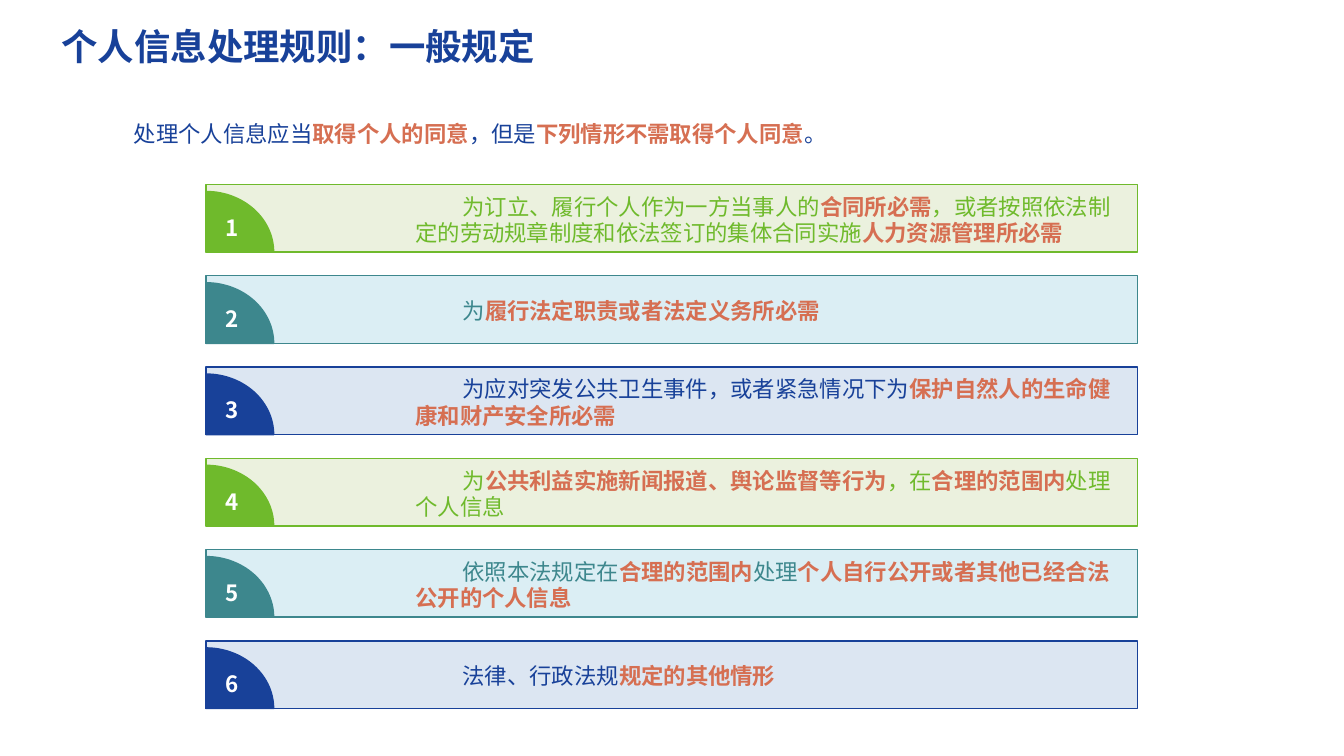
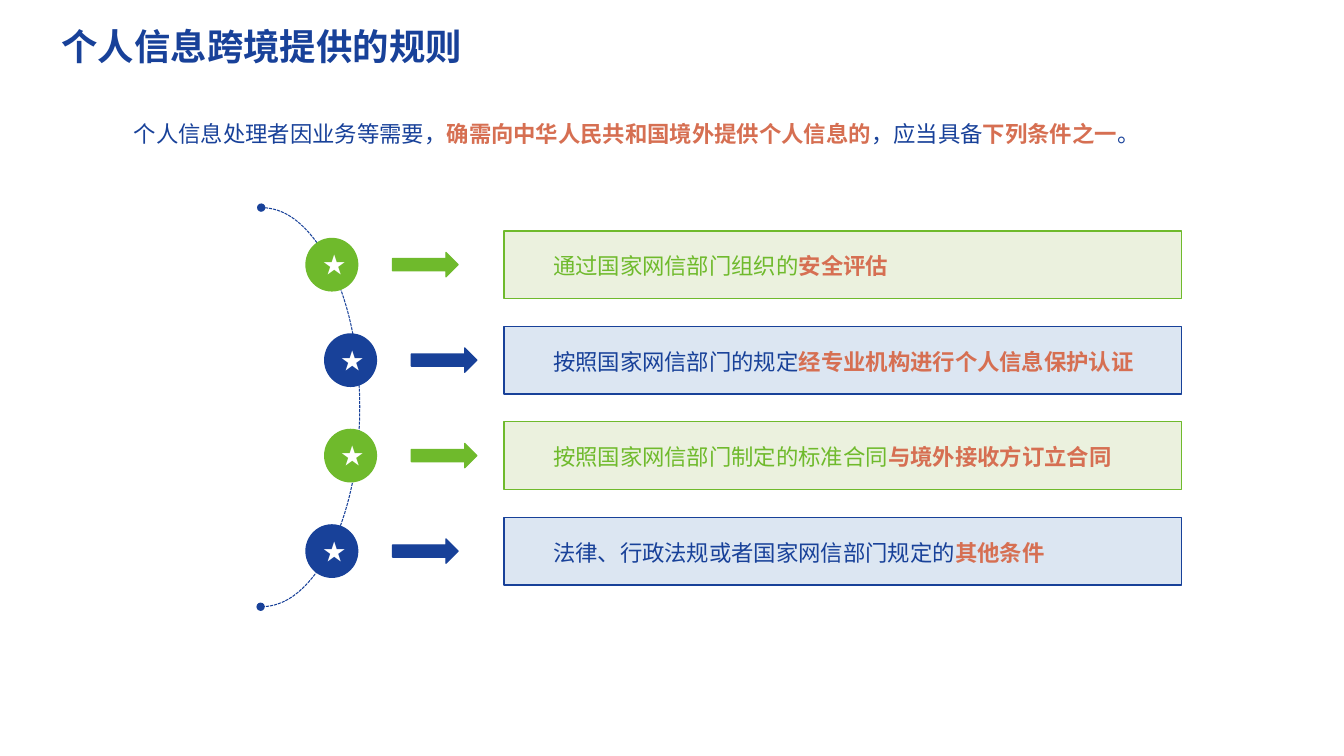
import math

import pptx
import pptx.util
import pptx.dml.color
import pptx.enum.dml
import pptx.enum.shapes
import pptx.enum.text
import pptx.oxml
import pptx.oxml.ns
from lxml import etree

Pt = pptx.util.Pt
RGB = pptx.dml.color.RGBColor
SHAPE = pptx.enum.shapes.MSO_SHAPE
ALIGN = pptx.enum.text.PP_ALIGN
ANCHOR = pptx.enum.text.MSO_ANCHOR
qn = pptx.oxml.ns.qn

FONT = "Noto Sans CJK SC"
BLUE = RGB(0x18, 0x41, 0x99)
GREEN = RGB(0x6F, 0xBA, 0x2C)
TEAL = RGB(0x3D, 0x87, 0x8D)
ORANGE = RGB(0xD6, 0x6F, 0x52)
WHITE = RGB(0xFF, 0xFF, 0xFF)
TINT = {
    BLUE: RGB(0xDC, 0xE6, 0xF2),
    GREEN: RGB(0xEB, 0xF1, 0xDE),
    TEAL: RGB(0xDB, 0xEE, 0xF4),
}

# Text between asterisks is emphasised.
CONSENT = {
    "title": "个人信息处理规则：一般规定",
    "intro": "处理个人信息应当*取得个人的同意*，但是*下列情形不需取得个人同意*。",
    "rows": [
        "为订立、履行个人作为一方当事人的*合同所必需*，或者按照依法制定的劳动规章制度和依法签订的集体合同实施*人力资源管理所必需*",
        "为*履行法定职责或者法定义务所必需*",
        "为应对突发公共卫生事件，或者紧急情况下为*保护自然人的生命健康和财产安全所必需*",
        "为*公共利益实施新闻报道、舆论监督等行为*，在*合理的范围内*处理个人信息",
        "依照本法规定在*合理的范围内*处理*个人自行公开或者其他已经合法公开的个人信息*",
        "法律、行政法规*规定的其他情形*",
    ],
    "colors": [GREEN, TEAL, BLUE],
}
CROSS_BORDER = {
    "title": "个人信息跨境提供的规则",
    "intro": "个人信息处理者因业务等需要，*确需向中华人民共和国境外提供个人信息的*，应当具备*下列条件之一*。",
    "rows": [
        "通过国家网信部门组织的*安全评估*",
        "按照国家网信部门的规定*经专业机构进行个人信息保护认证*",
        "按照国家网信部门制定的标准合同*与境外接收方订立合同*",
        "法律、行政法规或者国家网信部门规定的*其他条件*",
    ],
    "colors": [GREEN, BLUE],
}
ROW_HEIGHT = 48.3


def add_run(p, text, color, size=16, bold=False):
    r = p.add_run()
    r.text = text
    font = r.font
    font.name, font.size, font.bold = FONT, Pt(size), bold
    font.color.rgb = color
    ea = etree.SubElement(r._r.get_or_add_rPr(), qn("a:ea"))
    ea.set("typeface", FONT)


def add_marked_text(p, text, color, indent, spacing):
    """Write text run by run, with the parts between asterisks emphasised."""
    p._p.get_or_add_pPr().set("indent", str(Pt(indent)))
    p.line_spacing = Pt(spacing)
    for i, part in enumerate(text.split("*")):
        strong = i % 2 == 1
        if part:
            add_run(p, part, ORANGE if strong else color, bold=strong)


def set_margins(tf, left, top, right, bottom):
    tf.margin_left, tf.margin_top = Pt(left), Pt(top)
    tf.margin_right, tf.margin_bottom = Pt(right), Pt(bottom)


def paint(sp, fill, line):
    sp.shadow.inherit = False
    sp.fill.solid()
    sp.fill.fore_color.rgb = fill
    sp.line.color.rgb = line
    sp.line.width = Pt(1)


def add_filled(s, kind, left, top, width, height, fill, line):
    sp = s.shapes.add_shape(kind, Pt(left), Pt(top), Pt(width), Pt(height))
    paint(sp, fill, line)
    return sp


def add_row(s, left, top, width, text, color, text_left, indent):
    sp = add_filled(s, SHAPE.RECTANGLE, left, top, width, ROW_HEIGHT, TINT[color], color)
    tf = sp.text_frame
    tf.word_wrap = True
    tf.vertical_anchor = ANCHOR.MIDDLE
    set_margins(tf, text_left, 5.6, 7.2, 3.6)
    p = tf.paragraphs[0]
    p.alignment = ALIGN.LEFT
    add_marked_text(p, text, color, indent, 19)


def add_label(sp, text, margins):
    tf = sp.text_frame
    tf.vertical_anchor = ANCHOR.MIDDLE
    set_margins(tf, *margins)
    p = tf.paragraphs[0]
    p.alignment = ALIGN.CENTER
    add_run(p, text, WHITE, bold=True)


def add_quarter(s, left, bottom, width, height, color):
    """Draw a quarter ellipse whose centre is the lower left corner."""
    steps = 30
    angles = [math.pi / 2 * i / steps for i in range(steps + 1)]
    points = [(Pt(left + width * math.sin(a)), Pt(bottom - height * math.cos(a)))
              for a in angles]
    builder = s.shapes.build_freeform(Pt(left), Pt(bottom))
    builder.add_line_segments(points, close=True)
    sp = builder.convert_to_shape()
    paint(sp, color, color)
    return sp


def add_dotted_arc(s, left, top, width, height):
    sp = s.shapes.add_shape(SHAPE.ARC, Pt(left), Pt(top), Pt(width), Pt(height))
    sp.shadow.inherit = False
    sp.adjustments[0], sp.adjustments[1] = 162.04, 54.06
    sp.fill.background()
    sp.line.color.rgb = BLUE
    sp.line.width = Pt(0.75)
    sp.line.dash_style = pptx.enum.dml.MSO_LINE.SQUARE_DOT
    ln = sp.line._get_or_add_ln()
    for end in ("a:headEnd", "a:tailEnd"):
        etree.SubElement(ln, qn(end)).set("type", "oval")


def add_slide(prs, content):
    """Add a slide with the shared title and introduction."""
    s = prs.slides.add_slide(prs.slide_layouts[5])
    title = s.shapes.title
    title.left, title.top = Pt(36.7), Pt(18)
    title.width, title.height = Pt(612), Pt(34)
    tf = title.text_frame
    tf.auto_size = pptx.enum.text.MSO_AUTO_SIZE.NONE
    tf.vertical_anchor = ANCHOR.MIDDLE
    set_margins(tf, 7.2, 0, 7.2, 0)
    p = tf.paragraphs[0]
    p.alignment = ALIGN.LEFT
    p.line_spacing = 0.9
    add_run(p, content["title"], BLUE, size=26, bold=True)

    intro = s.shapes.add_textbox(Pt(52.6), Pt(71.3), Pt(854.6), Pt(39))
    intro.text_frame.word_wrap = True
    p = intro.text_frame.paragraphs[0]
    p.alignment = ALIGN.JUSTIFY
    add_marked_text(p, content["intro"], BLUE, 36, 30)
    return s


def rows_of(content, top, pitch):
    """Yield the index, top, text and colour of each row."""
    colors = content["colors"]
    for i, text in enumerate(content["rows"]):
        yield i, top + i * pitch, text, colors[i % len(colors)]


def build_consent(prs):
    s = add_slide(prs, CONSENT)
    left = 147.1
    for i, top, text, color in rows_of(CONSENT, 131.8, 65.2):
        add_row(s, left, top, 665.6, text, color, 149.6, 33.8)
        badge = add_quarter(s, left, top + ROW_HEIGHT, 48.4, 43.3, color)
        add_label(badge, str(i + 1), (0, 7.8, 11.4, 0))


def build_cross_border(prs):
    s = add_slide(prs, CROSS_BORDER)
    add_dotted_arc(s, 115.9, 148.3, 141.1, 285.1)
    count = len(CROSS_BORDER["rows"])
    for i, top, text, color in rows_of(CROSS_BORDER, 164.9, 68.2):
        middle = top + ROW_HEIGHT / 2
        shift = 13.4 if 0 < i < count - 1 else 0
        circle = add_filled(s, SHAPE.OVAL, 218.6 + shift, middle - 18.7, 36.9, 37.4, color, color)
        add_label(circle, "★", (3.6, 0, 0, 0))
        add_filled(s, SHAPE.RIGHT_ARROW, 280.4 + shift, middle - 8.65, 46.8, 17.3, color, color)
        add_row(s, 360, top, 484, text, color, 7.2, 28)


def main():
    prs = pptx.Presentation()
    prs.slide_width, prs.slide_height = Pt(960), Pt(540)
    build_consent(prs)
    build_cross_border(prs)
    prs.save("out.pptx")


if __name__ == "__main__":
    main()
